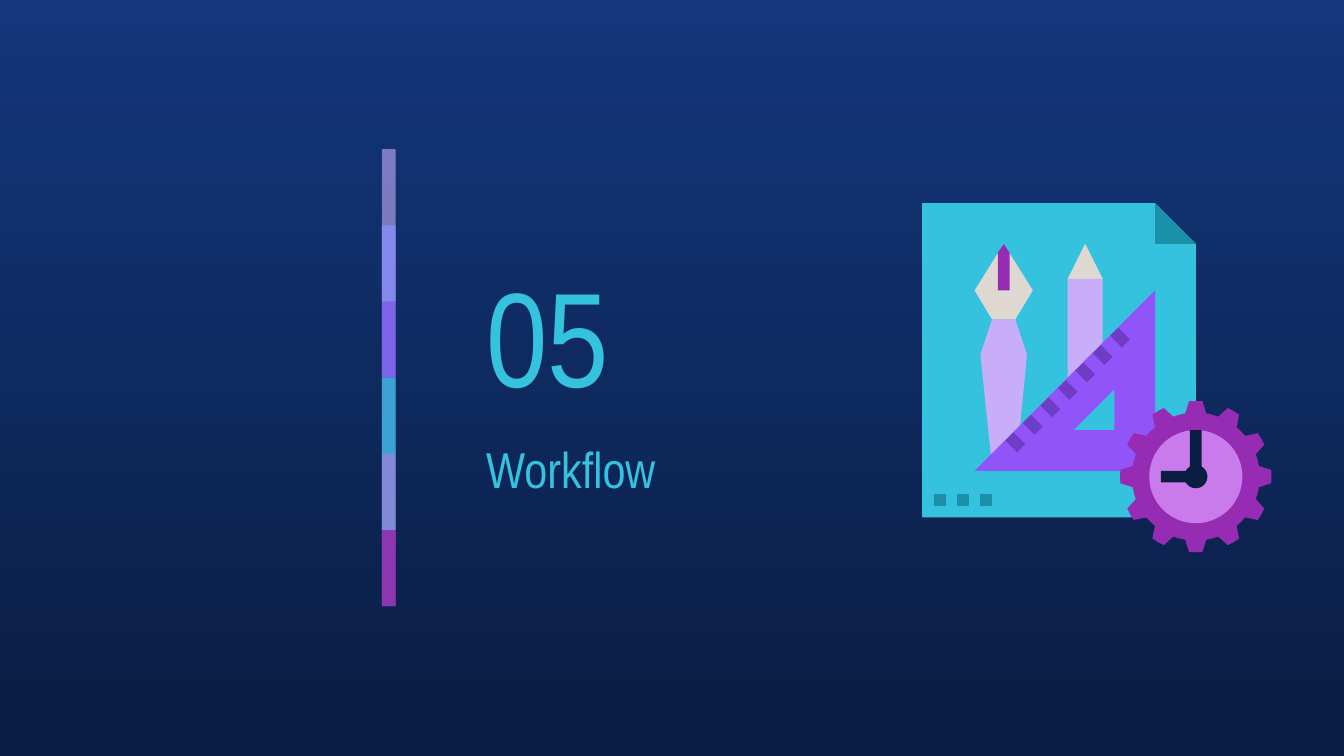
"""Build the Workflow section slide with its design-tools icon."""
from dataclasses import dataclass
from math import cos, radians, sin

from lxml.etree import SubElement
from pptx import Presentation
from pptx.dml.color import RGBColor as Rgb
from pptx.enum.shapes import MSO_SHAPE as Kind
from pptx.enum.text import MSO_ANCHOR as Anchor, MSO_AUTO_SIZE as Fit, PP_ALIGN as Align
from pptx.oxml.ns import qn
from pptx.util import Cm, Pt


@dataclass(frozen=True)
class Theme:
    font: str = "Arial Narrow"
    big: int = 72
    small: int = 27
    top: str = "13367C"
    navy: str = "0A1D42"
    cyan: str = "35C2DF"
    teal: str = "1B91A9"
    violet: str = "9154F8"
    tick: str = "6F3CC6"
    lilac: str = "C8AEF8"
    blue: str = "878FFF"
    pink: str = "CA7BEB"
    plum: str = "972CB4"
    cream: str = "DED8D0"


theme = Theme()
unit = 0.22
left, top = 17.43, 3.84


def paint(shape, color):
    shape.shadow.inherit = False
    shape.fill.solid()
    shape.fill.fore_color.rgb = Rgb.from_string(color)
    shape.line.fill.background()
    return shape


def trace(group, color, *loops):
    scaled = [[(x * 100, y * 100) for x, y in loop] for loop in loops]
    pen = group.shapes.build_freeform(*scaled[0][0], scale=Cm(unit) / 100)
    pen.add_line_segments(scaled[0][1:], close=True)
    for loop in scaled[1:]:
        pen.move_to(*loop[0])
        pen.add_line_segments(loop[1:], close=True)
    paint(pen.convert_to_shape(Cm(left), Cm(top)), color)


deck = Presentation()
deck.slide_width, deck.slide_height = Cm(25.4), Cm(14.29)
slide = deck.slides.add_slide(deck.slide_layouts[5])

back = slide.background.fill
back.gradient()
back.gradient_angle = 270
for stop, color in zip(back.gradient_stops, (theme.top, theme.navy)):
    stop.color.rgb = Rgb.from_string(color)

bars = [
    (theme.lilac, 59), (theme.blue, 74), (theme.violet, 53),
    (theme.cyan, 76), (theme.pink, 56), (theme.plum, 74),
]
step = 1.44
strip = slide.shapes.add_group_shape()
for row, (color, alpha) in enumerate(bars):
    tall = step if row == len(bars) - 1 else 2 * step
    bar = strip.shapes.add_shape(
        Kind.RECTANGLE, Cm(7.22), Cm(2.82 + row * step), Cm(0.26), Cm(tall))
    paint(bar, color)
    tint = bar.element.spPr.find(".//" + qn("a:srgbClr"))
    SubElement(tint, qn("a:alpha"), val=str(alpha * 1000))

title = slide.shapes.title
label = slide.shapes.add_textbox(Cm(8.94), Cm(8), Cm(8.38), Cm(1.7))
title.left, title.top, title.width, title.height = Cm(8.94), Cm(4.6), Cm(4.45), Cm(3.43)
for box, text, size in ((title, "05", theme.big), (label, "Workflow", theme.small)):
    frame = box.text_frame
    frame.text = text
    frame.word_wrap = True
    frame.auto_size = Fit.NONE
    frame.vertical_anchor = Anchor.MIDDLE
    frame.margin_left = frame.margin_right = Cm(0.25)
    frame.margin_top = frame.margin_bottom = Cm(0.25)
    line = frame.paragraphs[0]
    line.alignment = Align.LEFT
    font = line.runs[0].font
    font.name, font.size = theme.font, Pt(size)
    font.color.rgb = Rgb.from_string(theme.cyan)

icon = slide.shapes.add_group_shape()
hub = 23.5
tooth = [(-9.5, 5.5), (-5, 6.5), (0, 6.5), (5, 6.5), (9.5, 5.5), (15, 5.5)]
gear = [
    (hub + r * sin(radians(turn + a)), hub - r * cos(radians(turn + a)))
    for turn in range(0, 360, 30) for a, r in tooth
]
parts = [
    (theme.cyan, [(0, 0), (0, 27), (23.5, 27), (23.5, 3.5), (20, 0)]),
    (theme.teal, [(20, 0), (20, 3.5), (23.5, 3.5)]),
    (theme.cream, [(14, 3.5), (12.5, 6.5), (15.5, 6.5)]),
    (theme.lilac, [(12.5, 6.5), (12.5, 15), (15.5, 12), (15.5, 6.5)]),
    (theme.cream, [(7, 3.5), (4.5, 7.5), (6, 10), (8, 10), (9.5, 7.5)]),
    (theme.lilac, [(6, 10), (5, 13), (5.9, 21.7), (8.4, 19.2), (9, 13), (8, 10)]),
    (theme.plum, [(7, 3.5), (6.5, 4.25), (6.5, 7.5), (7.5, 7.5), (7.5, 4.25)]),
    (theme.violet, [(16.5, 16), (16.5, 19.5), (13, 19.5)], [(20, 7.5), (4.5, 23), (20, 23)]),
    (theme.plum, gear),
]
for color, *loops in parts:
    trace(icon, color, *loops)

for move in range(7):
    x, y = 7.85 + 1.5 * move, 19.7 - 1.5 * move
    trace(icon, theme.tick, [(x, y), (x - 0.7, y + 0.7), (x + 0.3, y + 1.7), (x + 1, y + 1)])
for x in (1, 3, 5):
    trace(icon, theme.teal, [(x, 25), (x, 26), (x + 1, 26), (x + 1, 25)])

for color, r in ((theme.pink, 4), (theme.navy, 1)):
    edge, wide = (hub - r) * unit, Cm(2 * r * unit)
    disc = icon.shapes.add_shape(Kind.OVAL, Cm(left + edge), Cm(top + edge), wide, wide)
    paint(disc, color)
trace(icon, theme.navy,
      [(23, 19.5), (23, 23), (20.5, 23), (20.5, 24), (24, 24), (24, 19.5)])

deck.save("out.pptx")
